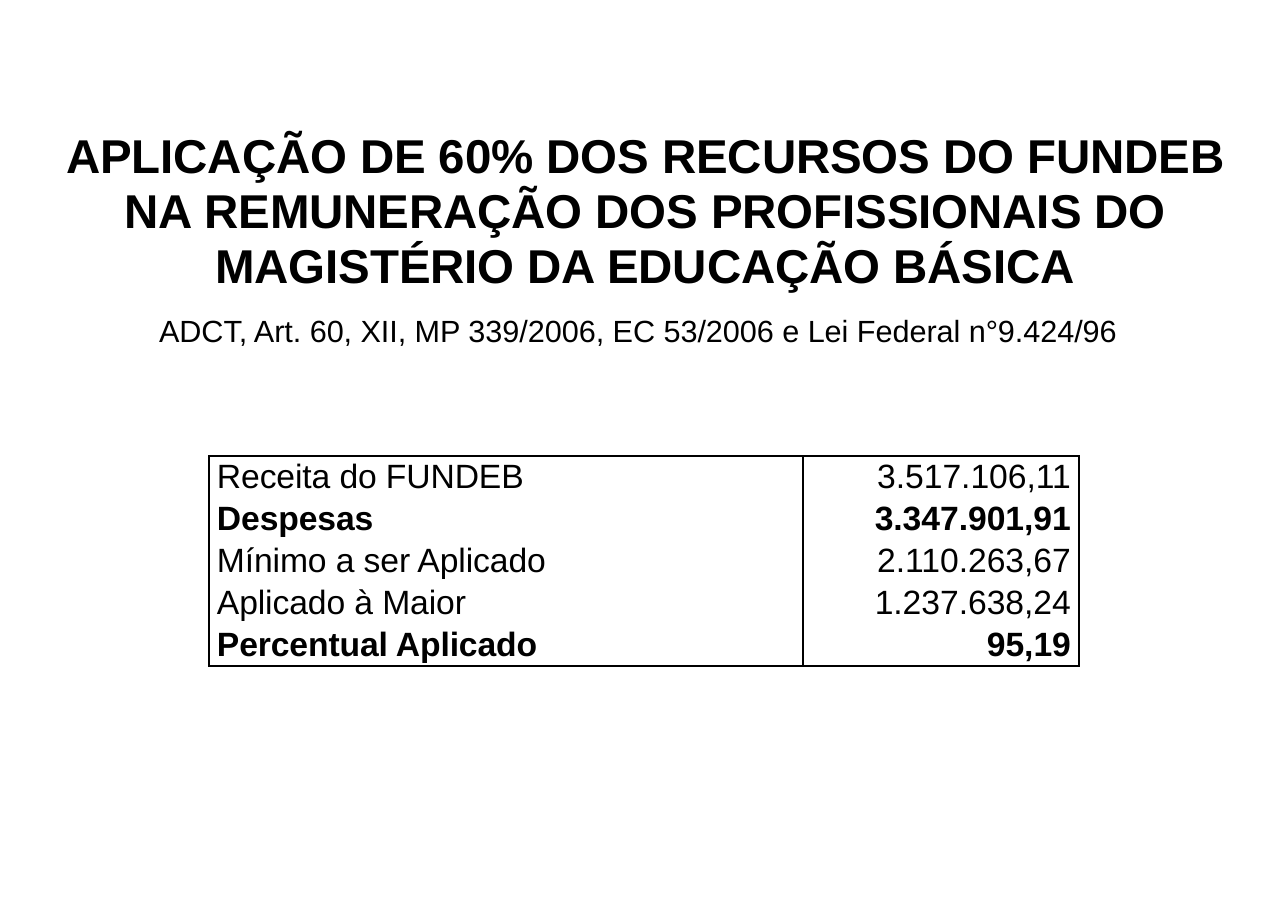
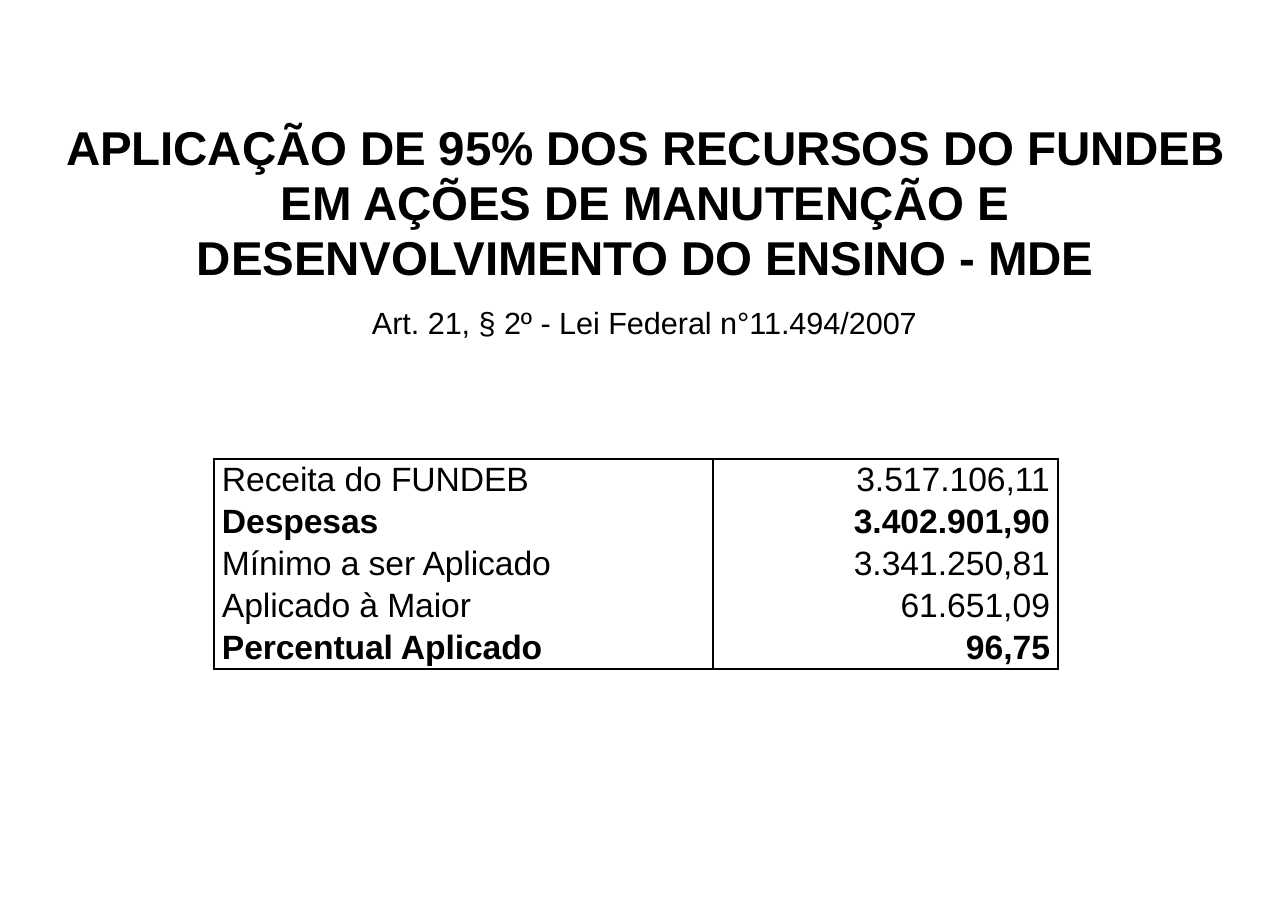
"""Build two slides on how the FUNDEB funds were applied."""
from lxml import etree
from pptx import Presentation
from pptx.dml.color import RGBColor
from pptx.enum.text import MSO_ANCHOR, PP_ALIGN
from pptx.oxml.ns import qn
from pptx.util import Pt

LEFT, MID, RIGHT = PP_ALIGN.LEFT, PP_ALIGN.CENTER, PP_ALIGN.RIGHT
TOP = MSO_ANCHOR.TOP
FONT, INK, PAPER = "Arial", "000000", "FFFFFF"
SCALE = 8298
WIDE, HIGH = 1288, 911
ROW, PAD = 42, 8
LABELS = ["Receita do FUNDEB", "Despesas", "Mínimo a ser Aplicado",
          "Aplicado à Maior", "Percentual Aplicado"]
STRONG = {"Despesas", "Percentual Aplicado"}
PAGES = [
    {
        "title": ["APLICAÇÃO DE 60% DOS RECURSOS DO FUNDEB",
                  "NA REMUNERAÇÃO DOS PROFISSIONAIS DO",
                  "MAGISTÉRIO DA EDUCAÇÃO BÁSICA"],
        "top": 126,
        "law": "ADCT, Art. 60, XII, MP 339/2006, EC 53/2006 e Lei Federal n°9.424/96",
        "span": (159, 970),
        "grid": (209, 456),
        "cols": (594, 276),
        "sums": ["3.517.106,11", "3.347.901,91", "2.110.263,67",
                 "1.237.638,24", "95,19"],
    },
    {
        "title": ["APLICAÇÃO DE 95% DOS RECURSOS DO FUNDEB",
                  "EM AÇÕES DE MANUTENÇÃO E",
                  "DESENVOLVIMENTO DO ENSINO - MDE"],
        "top": 118,
        "law": "Art. 21, § 2º - Lei Federal n°11.494/2007",
        "span": (372, 552),
        "grid": (214, 459),
        "cols": (499, 345),
        "sums": ["3.517.106,11", "3.402.901,90", "3.341.250,81",
                 "61.651,09", "96,75"],
    },
]


def px(size):
    return int(size * SCALE)


def paint(code):
    return RGBColor.from_string(code)


def write(frame, lines, size, bold=False, align=LEFT, lead=None, gap=0, track=0):
    para = frame.paragraphs[0]
    para.alignment = align
    para.space_before = Pt(gap)
    if lead:
        para.line_spacing = lead
    for num, line in enumerate(lines):
        if num:
            para.add_line_break()
        run = para.add_run()
        run.text = line
        font = run.font
        font.name, font.size, font.bold = FONT, Pt(size), bold
        font.color.rgb = paint(INK)
        run._r.get_or_add_rPr().set("spc", str(track))


def box(slide, area, inset):
    frame = slide.shapes.add_textbox(*map(px, area)).text_frame
    frame.word_wrap = True
    frame.vertical_anchor = TOP
    frame.margin_left = frame.margin_right = frame.margin_bottom = 0
    frame.margin_top = px(inset)
    return frame


def edge(cell, sides):
    props = cell._tc.get_or_add_tcPr()
    for side in "LRTB":
        line = etree.SubElement(props, qn("a:ln" + side), w=str(Pt(1)))
        if side in sides:
            fill = etree.SubElement(line, qn("a:solidFill"))
            etree.SubElement(fill, qn("a:srgbClr"), val=INK)
        else:
            etree.SubElement(line, qn("a:noFill"))


def table(slide, page):
    cols, rows = page["cols"], list(zip(LABELS, page["sums"]))
    area = (*page["grid"], sum(cols), ROW * len(rows))
    grid = slide.shapes.add_table(len(rows), len(cols), *map(px, area)).table
    grid.first_row = grid.horz_banding = False
    for col, width in zip(grid.columns, cols):
        col.width = px(width)
    for num, row in enumerate(rows):
        grid.rows[num].height = px(ROW)
        sides = "LR" + "T" * (num == 0) + "B" * (num == len(rows) - 1)
        for col, word in enumerate(row):
            cell = grid.cell(num, col)
            cell.margin_left = cell.margin_right = px(PAD)
            cell.margin_top = cell.margin_bottom = 0
            cell.vertical_anchor = TOP
            edge(cell, sides)
            cell.fill.solid()
            cell.fill.fore_color.rgb = paint(PAPER)
            write(cell.text_frame, [word], 22, bold=row[0] in STRONG,
                  align=(LEFT, RIGHT)[col], lead=Pt(25.7), track=(-5, 0)[col])


def main():
    deck = Presentation()
    deck.slide_width, deck.slide_height = px(WIDE), px(HIGH)
    for page in PAGES:
        slide = deck.slides.add_slide(deck.slide_layouts[6])
        top = page["top"]
        write(box(slide, (62, top, 1166, 169), 4), page["title"], 31,
              bold=True, align=MID, lead=0.96, gap=2.6, track=-5)
        left, width = page["span"]
        write(box(slide, (left, top + 185, width, 40), 1), [page["law"]], 20,
              gap=1.1, track=-5)
        table(slide, page)
    deck.save("out.pptx")


if __name__ == "__main__":
    main()
